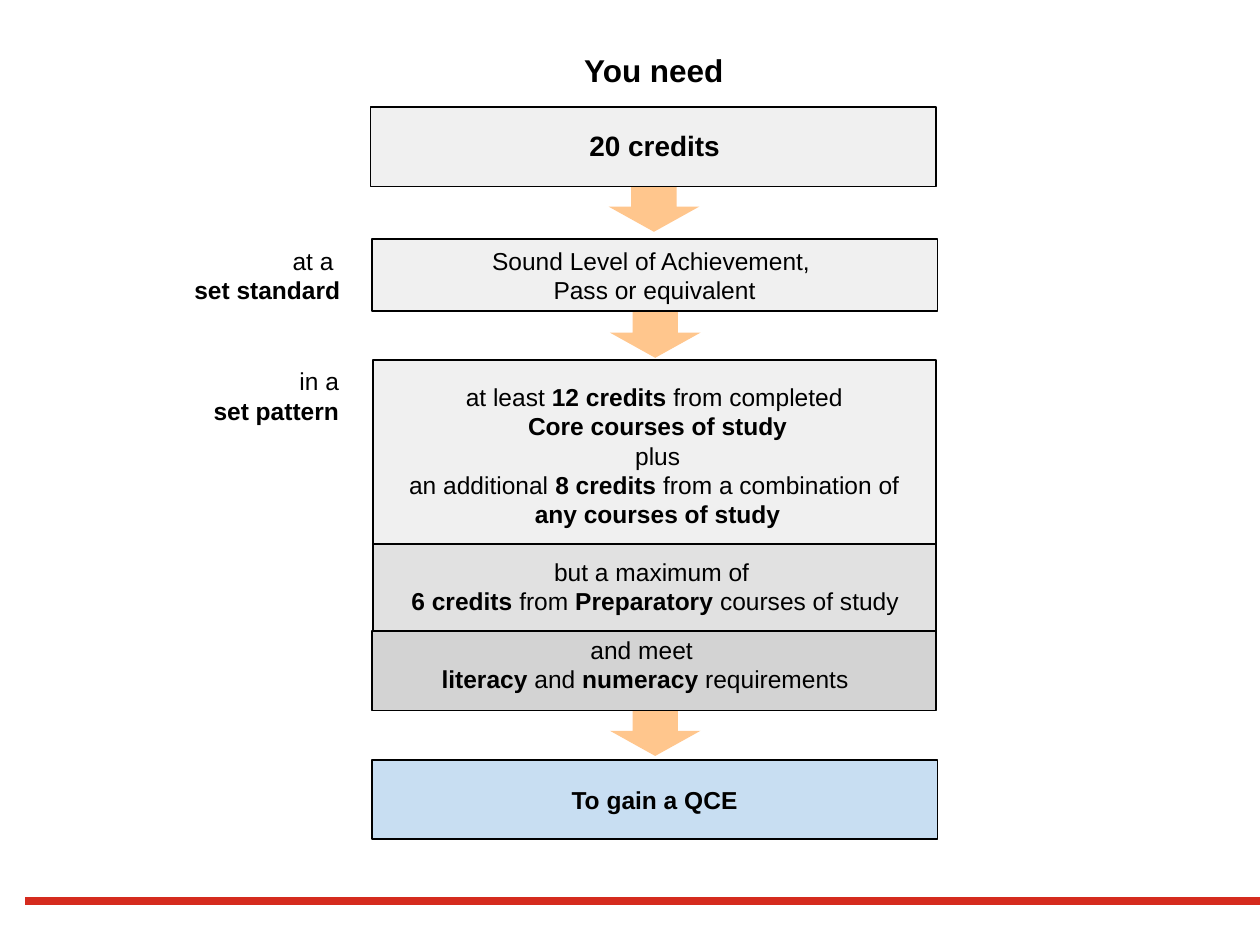
"""Build a one-slide flow chart of the credits needed to gain a certificate."""
from dataclasses import dataclass

from lxml.etree import SubElement
from pptx import Presentation
from pptx.dml.color import RGBColor
from pptx.enum.shapes import MSO_CONNECTOR as Link, MSO_SHAPE as Kind
from pptx.enum.text import MSO_ANCHOR as Anchor, PP_ALIGN as Align
from pptx.oxml.ns import qn
from pptx.util import Inches, Pt

COLS, ROWS = 100, 75
COLORS = {"black": "000000", "light": "F0F0F0", "mid": "E1E1E1", "dark": "D3D3D3",
          "blue": "C8DEF2", "orange": "FFC68D", "red": "D52B1E"}


@dataclass(frozen=True)
class Area:
    col: float
    row: float
    cols: float
    rows: float


@dataclass(frozen=True)
class Box:
    area: Area
    fill: str
    text: str = ""


@dataclass(frozen=True)
class Label:
    area: Area
    text: str
    size: int = 14
    align: Align = Align.CENTER


ARROWS = [Area(48.3, 14.4, 7.2, 4), Area(48.4, 24.4, 7.2, 4), Area(48.4, 56, 7.2, 4)]
BOXES = [
    Box(Area(29.6, 43.2, 44.7, 6.9), "mid"),
    Box(Area(29.5, 19, 44.9, 5.7), "light", "Sound Level of Achievement, \nPass or equivalent"),
    Box(Area(29.4, 8.5, 44.9, 6.3), "light"),
    Box(Area(29.5, 50.1, 44.8, 6.3), "dark"),
    Box(Area(29.5, 60.3, 44.9, 6.3), "blue"),
    Box(Area(29.6, 28.6, 44.7, 14.6), "light"),
]
LABELS = [
    Label(Area(31.1, 3.6, 41.6, 4), "*You need", 18),
    Label(Area(29.5, 9.7, 44.9, 3.7), "*20 credits", 16),
    Label(Area(13.6, 19, 14.4, 5.7), "at a \n*set standard", align=Align.RIGHT),
    Label(Area(13.3, 28.6, 14.6, 5.7), "in a\n*set pattern", align=Align.RIGHT),
    Label(Area(31, 29.8, 42.4, 12.8),
          "at least *12 credits *from completed \n*Core courses of study\n*plus\n"
          "an additional *8 credits *from a combination of \n*any courses of study"),
    Label(Area(31, 43.7, 42, 5.7),
          "but a maximum of \n*6 credits *from* Preparatory *courses of study"),
    Label(Area(29.5, 49.9, 43.4, 5.7),
          "and meet \n*literacy *and* numeracy *requirements"),
    Label(Area(29.5, 61.8, 44.9, 3.4), "*To gain a QCE"),
]


def rgb(name: str) -> RGBColor:
    return RGBColor.from_string(COLORS[name])


def place(prs, area: Area) -> tuple[int, int, int, int]:
    w, h = prs.slide_width / COLS, prs.slide_height / ROWS
    return (round(area.col * w), round(area.row * h),
            round(area.cols * w), round(area.rows * h))


def write(tf, text: str, size: int, align: Align) -> None:
    tf.word_wrap = True
    p = tf.paragraphs[0]
    p.alignment = align
    p.font.name, p.font.size = "Arial", Pt(size)
    p.font.color.rgb = rgb("black")
    for i, part in enumerate(text.split("*")):
        for j, line in enumerate(part.split("\n")):
            if j:
                p.add_line_break()
            if line:
                r = p.add_run()
                r.text, r.font.bold = line, i % 2 == 1


def add_shape(prs, s, kind: Kind, area: Area, fill: str):
    sp = s.shapes.add_shape(kind, *place(prs, area))
    sp.shadow.inherit = False
    sp.fill.solid()
    sp.fill.fore_color.rgb = rgb(fill)
    return sp


def add_arrow(prs, s, area: Area) -> None:
    add_shape(prs, s, Kind.DOWN_ARROW, area, "orange").line.fill.background()


def add_box(prs, s, box: Box) -> None:
    sp = add_shape(prs, s, Kind.RECTANGLE, box.area, box.fill)
    sp.line.color.rgb = rgb("black")
    sp.line.width = Pt(1)
    if box.text:
        sp.text_frame.vertical_anchor = Anchor.MIDDLE
        write(sp.text_frame, box.text, 14, Align.CENTER)


def add_label(prs, s, label: Label) -> None:
    sp = s.shapes.add_textbox(*place(prs, label.area))
    write(sp.text_frame, label.text, label.size, label.align)


def add_rule(prs, s, area: Area) -> None:
    x, y, w, h = place(prs, area)
    rule = s.shapes.add_connector(Link.STRAIGHT, x, y, x + w, y + h)
    rule.line.color.rgb = rgb("red")
    rule.line.width = Pt(4.2)
    SubElement(rule._element.spPr, qn("a:effectLst"))


def main() -> None:
    prs = Presentation()
    prs.slide_width, prs.slide_height = Inches(10), Inches(7.5)
    s = prs.slides.add_slide(prs.slide_layouts[6])
    add_rule(prs, s, Area(2, 71.5, 98, 0))
    for area in ARROWS:
        add_arrow(prs, s, area)
    for box in BOXES:
        add_box(prs, s, box)
    for label in LABELS:
        add_label(prs, s, label)
    prs.save("out.pptx")


if __name__ == "__main__":
    main()
